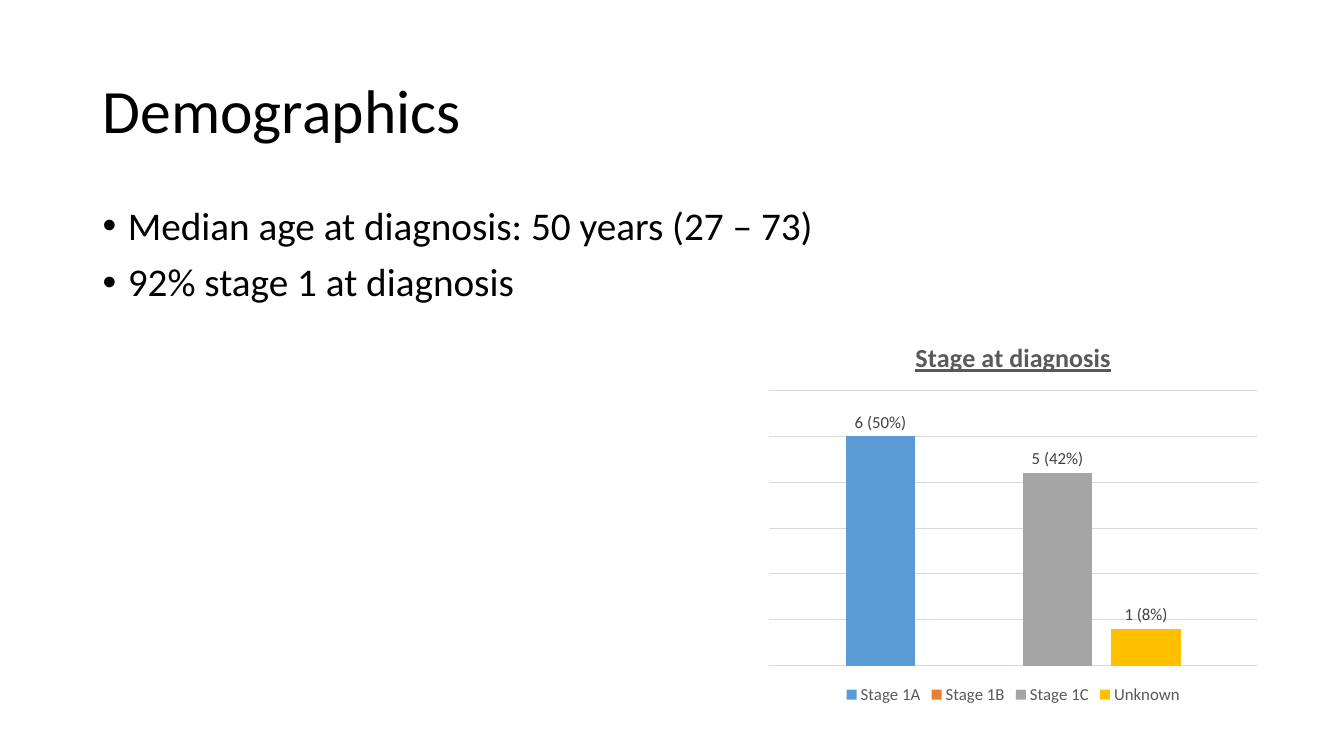
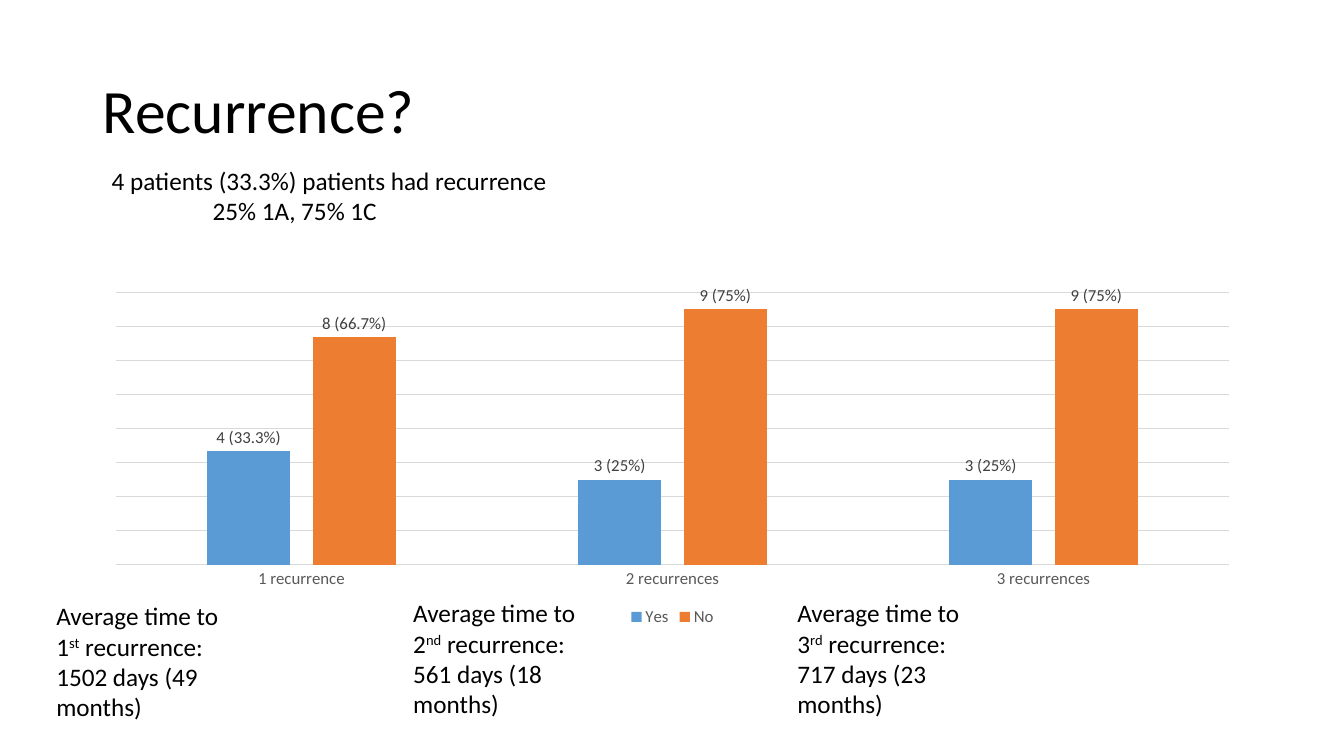
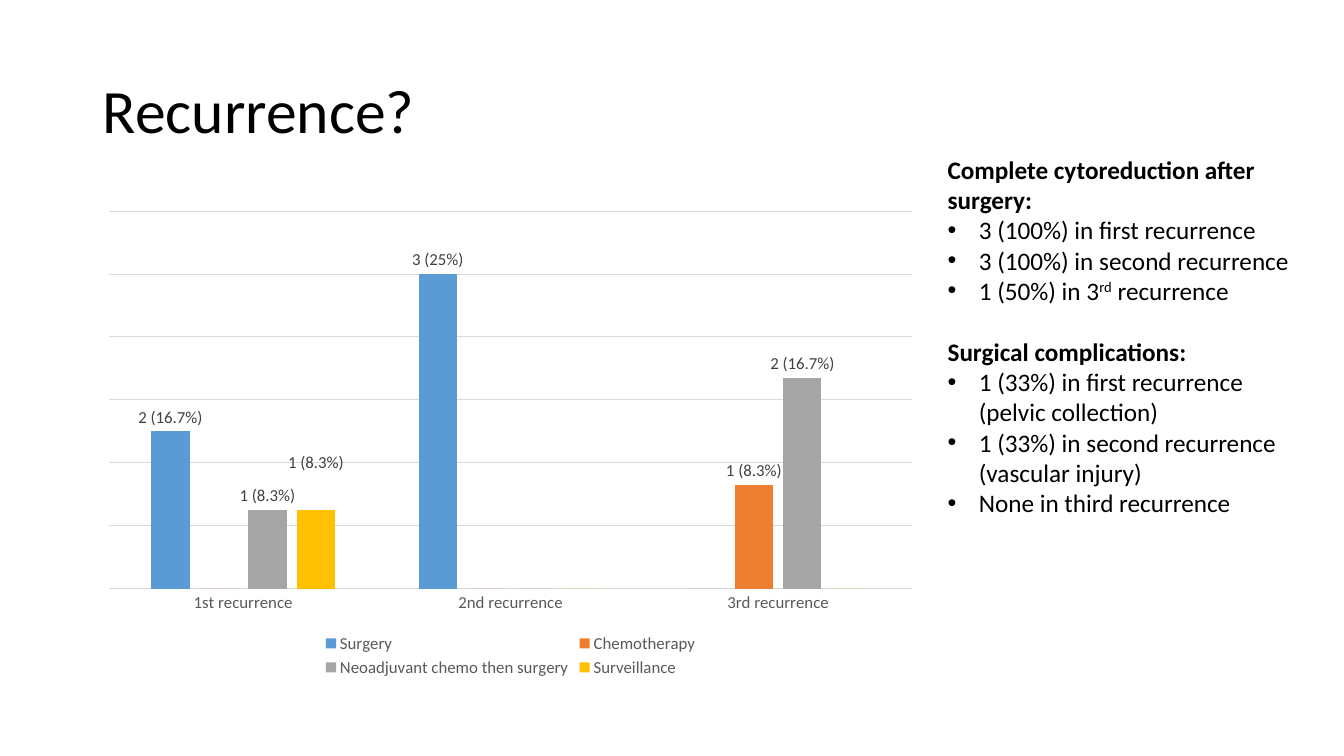
from lxml.etree import SubElement
from pptx import Presentation
from pptx.chart.data import CategoryChartData
from pptx.dml.color import RGBColor
from pptx.enum.chart import XL_CHART_TYPE, XL_LABEL_POSITION, XL_LEGEND_POSITION, XL_TICK_MARK
from pptx.enum.text import MSO_ANCHOR, MSO_AUTO_SIZE, PP_ALIGN
from pptx.oxml import parse_xml
from pptx.oxml.ns import nsdecls, qn
from pptx.util import Inches, Pt

# Shared style
FONT = "Calibri"
BLACK = RGBColor(0x00, 0x00, 0x00)
LABEL_GRAY = RGBColor(0x40, 0x40, 0x40)
TEXT_GRAY = RGBColor(0x59, 0x59, 0x59)
GRID_GRAY = RGBColor(0xD9, 0xD9, 0xD9)
BLUE = RGBColor(0x5B, 0x9B, 0xD5)
ORANGE = RGBColor(0xED, 0x7D, 0x31)
GRAY = RGBColor(0xA5, 0xA5, 0xA5)
GOLD = RGBColor(0xFF, 0xC0, 0x00)
SERIES_COLORS = (BLUE, ORANGE, GRAY, GOLD)
LEFT, CONTENT_WIDTH = 0.92, 11.5


def style_font(font, size, color=BLACK, bold=False):
    font.name = FONT
    font.size = Pt(size)
    font.bold = bold
    font.color.rgb = color


def style_line(line):
    line.color.rgb = GRID_GRAY
    line.width = Pt(0.75)


# Text
def add_titled_slide(presentation, title):
    slide = presentation.slides.add_slide(presentation.slide_layouts[5])
    shape = slide.shapes.title
    shape.left, shape.top = Inches(LEFT), Inches(0.4)
    shape.width, shape.height = Inches(CONTENT_WIDTH), Inches(1.45)
    frame = shape.text_frame
    frame.text = title
    frame.auto_size = MSO_AUTO_SIZE.NONE
    frame.vertical_anchor = MSO_ANCHOR.MIDDLE
    paragraph = frame.paragraphs[0]
    paragraph.alignment = PP_ALIGN.LEFT
    paragraph.line_spacing = 0.9
    style_font(paragraph.font, 44)
    return slide


def add_text_frame(slide, left, top, width, height, grow=True):
    box = slide.shapes.add_textbox(Inches(left), Inches(top), Inches(width), Inches(height))
    frame = box.text_frame
    frame.word_wrap = True
    frame.auto_size = MSO_AUTO_SIZE.SHAPE_TO_FIT_TEXT if grow else MSO_AUTO_SIZE.NONE
    return frame


def add_paragraph(frame, text, size=18, bold=False, indent=0, bullet=False):
    """Add a paragraph; text between carets is superscript."""
    first = frame.paragraphs[0]
    paragraph = frame.add_paragraph() if first.runs else first
    properties = paragraph._p.get_or_add_pPr()
    if indent:
        properties.set("marL", str(Inches(indent)))
    if bullet:
        properties.set("indent", str(-Inches(indent)))
        SubElement(properties, qn("a:buFont"), typeface="Arial")
        SubElement(properties, qn("a:buChar"), char="•")
    style_font(paragraph.font, size, bold=bold)
    for position, part in enumerate(text.split("^")):
        run = paragraph.add_run()
        run.text = part
        if position % 2:
            run._r.get_or_add_rPr().set("baseline", "30000")
    return paragraph


# Charts
def find_label_element(series, index):
    return series._element.xpath(f'c:dLbls/c:dLbl[c:idx/@val="{index}"]')[0]


def set_point_label(series, index, text):
    """Write a point label; an empty text hides the label."""
    label = series.points[index].data_label
    label.position = XL_LABEL_POSITION.OUTSIDE_END
    if not text:
        element = find_label_element(series, index)
        for child in list(element)[1:]:
            element.remove(child)
        SubElement(element, qn("c:delete"), val="1")
        return
    frame = label.text_frame
    frame.word_wrap = False
    run = frame.paragraphs[0].add_run()
    run.text = text
    style_font(run.font, 12, LABEL_GRAY)


def shift_label(series, index, across, down):
    """Move a point label by shares of the chart's width and height."""
    find_label_element(series, index).insert(1, parse_xml(
        f'<c:layout {nsdecls("c")}><c:manualLayout><c:x val="{across}"/>'
        f'<c:y val="{down}"/></c:manualLayout></c:layout>'))


def label_series(series, texts, number_format):
    labels = series.data_labels
    labels.show_value = True
    labels.number_format = number_format
    labels.number_format_is_linked = False
    labels.position = XL_LABEL_POSITION.OUTSIDE_END
    style_font(labels.font, 12, LABEL_GRAY)
    for leader_lines in series._element.xpath("c:dLbls/c:showLeaderLines"):
        leader_lines.set("val", "0")
    for index, text in enumerate(texts):
        set_point_label(series, index, text)


def add_column_chart(slide, area, categories, rows, maximum, step, number_format="0%", title=None):
    """Each row holds a series name, its values and its point labels."""
    data = CategoryChartData(number_format=number_format)
    data.categories = categories
    for name, values, _ in rows:
        data.add_series(name, values)
    chart = slide.shapes.add_chart(
        XL_CHART_TYPE.COLUMN_CLUSTERED, *(Inches(length) for length in area), data).chart
    style_font(chart.font, 10)

    chart.has_title = title is not None
    if title:
        run = chart.chart_title.text_frame.paragraphs[0].add_run()
        run.text = title
        style_font(run.font, 18.6, TEXT_GRAY, bold=True)
        run.font.underline = True
        chart.chart_title.include_in_layout = False

    chart.has_legend = True
    chart.legend.position = XL_LEGEND_POSITION.BOTTOM
    chart.legend.include_in_layout = False
    style_font(chart.legend.font, 12, TEXT_GRAY)

    value_axis = chart.value_axis
    value_axis.visible = False
    value_axis.minimum_scale, value_axis.maximum_scale = 0, maximum
    value_axis.major_unit = step
    value_axis.has_major_gridlines = True
    value_axis.tick_labels.number_format = number_format
    value_axis.tick_labels.number_format_is_linked = False
    style_line(value_axis.major_gridlines.format.line)

    category_axis = chart.category_axis
    category_axis.visible = len(categories) > 1
    category_axis.major_tick_mark = XL_TICK_MARK.NONE
    style_font(category_axis.tick_labels.font, 12, TEXT_GRAY)
    style_line(category_axis.format.line)

    plot = chart.plots[0]
    plot.gap_width, plot.overlap = 219, -27
    plot.vary_by_categories = False
    for series, color, (_, _, texts) in zip(plot.series, SERIES_COLORS, rows):
        series.format.fill.solid()
        series.format.fill.fore_color.rgb = color
        if texts:
            label_series(series, texts, number_format)
    return chart


# Slides
def add_demographics(presentation):
    slide = add_titled_slide(presentation, "Demographics")
    frame = add_text_frame(slide, LEFT, 2, CONTENT_WIDTH, 4.76, grow=False)
    for position, text in enumerate(("Median age at diagnosis: 50 years (27 – 73)",
                                     "92% stage 1 at diagnosis")):
        paragraph = add_paragraph(frame, text, 28, indent=0.25, bullet=True)
        paragraph.line_spacing = 0.9
        if position:
            paragraph.space_before = Pt(10)
    rows = [("Stage 1A", [0.5], ["6 (50%)"]),
            ("Stage 1B", [0], []),
            ("Stage 1C", [0.42], ["5 (42%)"]),
            ("Unknown", [0.08], ["1 (8%)"])]
    add_column_chart(slide, (7.53, 3.19, 5.04, 3.84), ["1"], rows, 0.6, 0.1,
                     title="Stage at diagnosis")


def add_recurrence_rates(presentation):
    slide = add_titled_slide(presentation, "Recurrence?")
    rows = [("Yes", [0.333, 0.25, 0.25], ["4 (33.3%)", "3 (25%)", "3 (25%)"]),
            ("No", [0.667, 0.75, 0.75], ["8 (66.7%)", "9 (75%)", "9 (75%)"])]
    add_column_chart(slide, (LEFT, 2.83, CONTENT_WIDTH, 3.43),
                     ["1 recurrence", "2 recurrences", "3 recurrences"],
                     rows, 0.8, 0.1, "0.0%")
    for left, top, ordinal, duration in (
            (0.46, 5.91, "1^st^", "1502 days (49 months)"),
            (4, 5.88, "2^nd^", "561 days (18 months)"),
            (7.81, 5.88, "3^rd^", "717 days (23 months)")):
        frame = add_text_frame(slide, left, top, 1.85, 1.31)
        add_paragraph(frame, f"Average time to {ordinal} recurrence: {duration}")
    frame = add_text_frame(slide, 1.01, 1.59, 7.22, 0.71)
    add_paragraph(frame, "4 patients (33.3%) patients had recurrence")
    add_paragraph(frame, "25% 1A, 75% 1C", indent=1)


def add_recurrence_treatment(presentation):
    slide = add_titled_slide(presentation, "Recurrence?")
    rows = [("Surgery", [0.5, 1, 0], ["2 (16.7%)", "3 (25%)", ""]),
            ("Chemotherapy", [0, 0, 0.33], ["", "", "1 (8.3%)"]),
            ("Neoadjuvant chemo then surgery", [0.25, 0, 0.67], ["1 (8.3%)", "", "2 (16.7%)"]),
            ("Surveillance", [0.25, 0, 0], ["1 (8.3%)", "", ""])]
    chart = add_column_chart(slide, (LEFT, 2, 8.29, 4.76),
                             ["1st recurrence", "2nd recurrence", "3rd recurrence"],
                             rows, 1.2, 0.2)
    shift_label(chart.plots[0].series[3], 0, 0, -0.07)

    frame = add_text_frame(slide, 9.3, 1.48, 3.62, 3.74)
    sections = (
        ("Complete cytoreduction after surgery:",
         ("3 (100%) in first recurrence",
          "3 (100%) in second recurrence",
          "1 (50%) in 3^rd^ recurrence")),
        ("Surgical complications:",
         ("1 (33%) in first recurrence (pelvic collection)",
          "1 (33%) in second recurrence (vascular injury)",
          "None in third recurrence")))
    for position, (heading, items) in enumerate(sections):
        paragraph = add_paragraph(frame, heading, bold=True)
        if position:
            paragraph.space_before = Pt(22)
        for item in items:
            add_paragraph(frame, item, indent=0.31, bullet=True)


def main():
    presentation = Presentation()
    presentation.slide_width, presentation.slide_height = Inches(13.33), Inches(7.5)
    add_demographics(presentation)
    add_recurrence_rates(presentation)
    add_recurrence_treatment(presentation)
    presentation.save("out.pptx")


if __name__ == "__main__":
    main()
